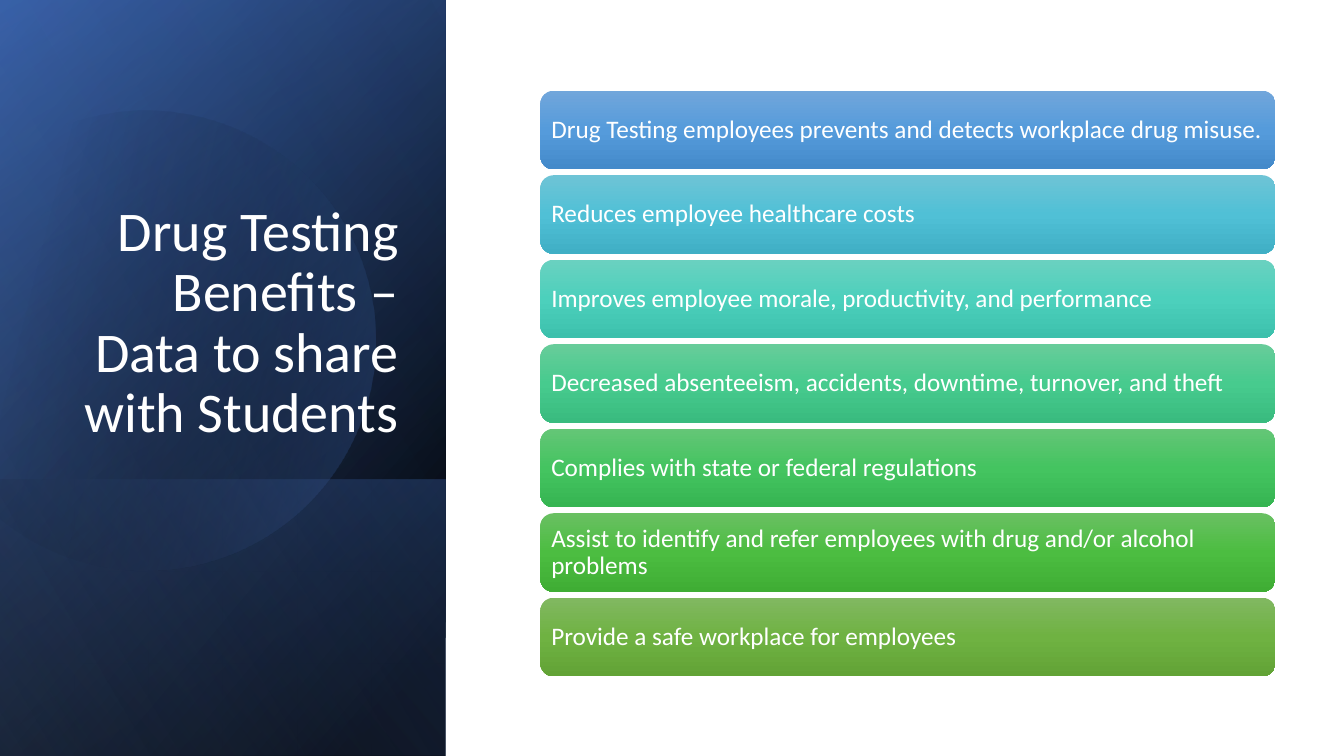
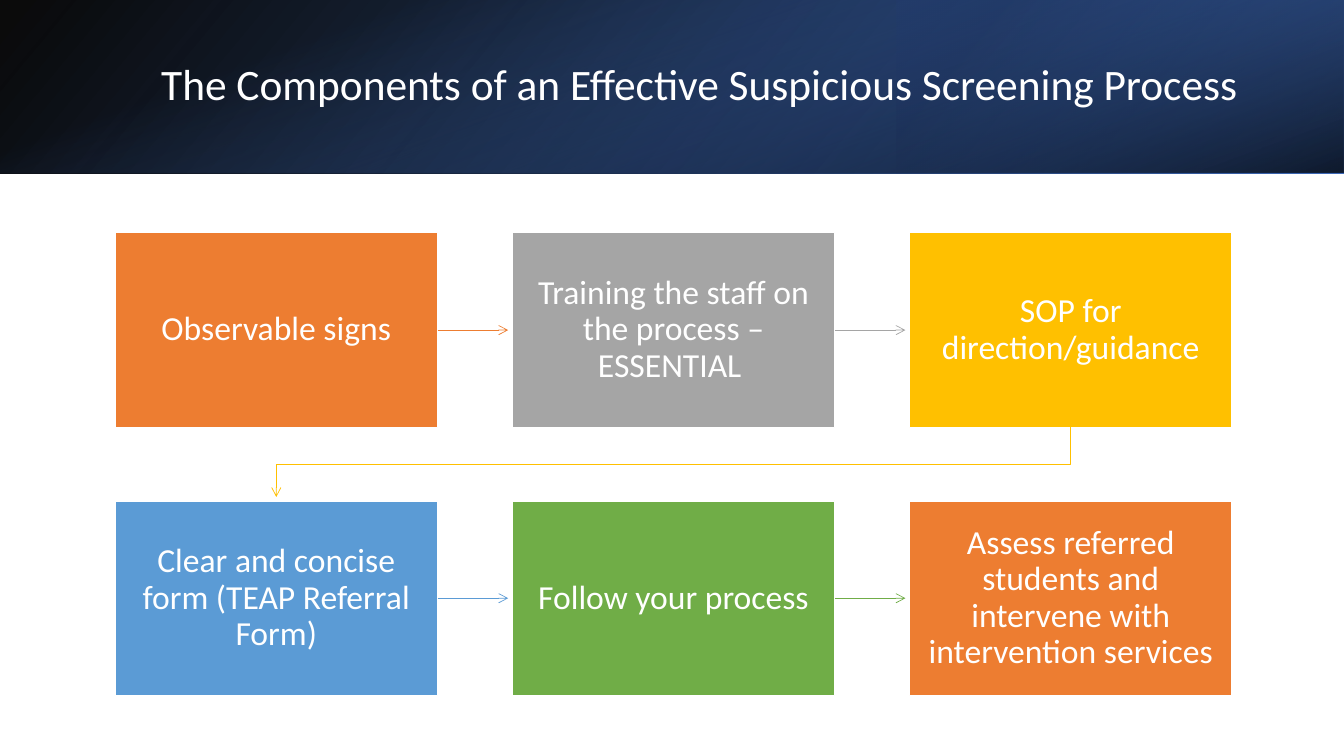
"""Build two slides on drug testing benefits and the screening process."""
from itertools import pairwise
from math import cos, radians, sin, tan

from lxml.etree import SubElement
from pptx import Presentation
from pptx.dml.color import RGBColor
from pptx.enum.shapes import MSO_CONNECTOR, MSO_SHAPE
from pptx.enum.text import MSO_ANCHOR, PP_ALIGN
from pptx.oxml.ns import qn
from pptx.util import Pt

EMU_PER_PX = 9144
SLIDE_WIDTH, SLIDE_HEIGHT = 1333, 750
FONT = "Calibri"

WHITE = RGBColor(0xFF, 0xFF, 0xFF)
BLACK = RGBColor(0x00, 0x00, 0x00)
NAVY = RGBColor(0x20, 0x38, 0x64)
DEEP_BLUE = RGBColor(0x2F, 0x55, 0x97)
BLUE = RGBColor(0x44, 0x72, 0xC4)
PALE_BLUE = RGBColor(0x8F, 0xAA, 0xDC)
ORANGE = RGBColor(0xED, 0x7D, 0x31)
GRAY = RGBColor(0xA5, 0xA5, 0xA5)
GOLD = RGBColor(0xFF, 0xC0, 0x00)
SKY = RGBColor(0x5B, 0x9B, 0xD5)
GREEN = RGBColor(0x70, 0xAD, 0x47)

BENEFITS = [
    ("Drug Testing employees prevents and detects workplace drug misuse.",
     (RGBColor(0x71, 0xA6, 0xDB), RGBColor(0x55, 0x9B, 0xDB), RGBColor(0x44, 0x8A, 0xCA))),
    ("Reduces employee healthcare costs",
     (RGBColor(0x6E, 0xC4, 0xD6), RGBColor(0x50, 0xC0, 0xD6), RGBColor(0x40, 0xAF, 0xC5))),
    ("Improves employee morale, productivity, and performance",
     (RGBColor(0x6A, 0xD1, 0xC0), RGBColor(0x4C, 0xD0, 0xBC), RGBColor(0x3C, 0xC0, 0xAC))),
    ("Decreased absenteeism, accidents, downtime, turnover, and theft",
     (RGBColor(0x67, 0xCC, 0x9A), RGBColor(0x47, 0xCB, 0x8E), RGBColor(0x39, 0xBB, 0x7F))),
    ("Complies with state or federal regulations",
     (RGBColor(0x64, 0xC6, 0x77), RGBColor(0x44, 0xC4, 0x60), RGBColor(0x36, 0xB5, 0x52))),
    ("Assist to identify and refer employees with drug and/or alcohol problems",
     (RGBColor(0x69, 0xC0, 0x62), RGBColor(0x4C, 0xBD, 0x41), RGBColor(0x3F, 0xAD, 0x34))),
    ("Provide a safe workplace for employees",
     (RGBColor(0x81, 0xB8, 0x61), RGBColor(0x6F, 0xB2, 0x42), RGBColor(0x62, 0xA3, 0x36))),
]
STEPS = [
    ("Observable signs", ORANGE),
    ("Training the staff on the process – ESSENTIAL ", GRAY),
    ("SOP for direction/guidance", GOLD),
    ("Clear and concise form (TEAP Referral Form)", SKY),
    ("Follow your process", GREEN),
    ("Assess referred students and intervene with intervention services", ORANGE),
]


def emu(*lengths):
    """Turn px lengths into a list of EMU."""
    return [round(length * EMU_PER_PX) for length in lengths]


def set_gradient(shape, stops, angle):
    """Fill a shape with (position, colour, opacity) stops at a clockwise angle."""
    shape.fill.gradient()
    shape.fill.gradient_angle = (360 - angle) % 360
    stop_list = shape._element.spPr.find(qn("a:gradFill")).find(qn("a:gsLst"))
    for old_stop in list(stop_list):
        stop_list.remove(old_stop)
    for position, color, opacity in stops:
        stop = SubElement(stop_list, qn("a:gs"), pos=str(position * 1000))
        color_node = SubElement(stop, qn("a:srgbClr"), val=str(color))
        if opacity < 100:
            SubElement(color_node, qn("a:alpha"), val=str(opacity * 1000))


def add_box(slide, kind, box):
    """Add a preset shape without shadow or line."""
    shape = slide.shapes.add_shape(kind, *emu(*box))
    shape.shadow.inherit = False
    shape.line.fill.background()
    return shape


def add_layer(slide, box, stops, angle, rotation=0, flip=True):
    """Add one gradient layer of a background panel."""
    layer = add_box(slide, MSO_SHAPE.RECTANGLE, box)
    layer.rotation = rotation
    if flip:
        layer._element.spPr.find(qn("a:xfrm")).set("flipH", "1")
    set_gradient(layer, stops, angle)


def write_text(shape, text, *, size, align=PP_ALIGN.LEFT, anchor=MSO_ANCHOR.MIDDLE,
               inset_x=10, inset_y=5):
    """Write one white wrapped paragraph into a shape."""
    frame = shape.text_frame
    frame.word_wrap = True
    frame.vertical_anchor = anchor
    frame.margin_left, frame.margin_right = emu(inset_x, inset_x)
    frame.margin_top, frame.margin_bottom = emu(inset_y, inset_y)
    paragraph = frame.paragraphs[0]
    paragraph.alignment = align
    paragraph.line_spacing = 0.9
    run = paragraph.add_run()
    run.text = text
    run.font.name = FONT
    run.font.size = Pt(size)
    run.font.color.rgb = WHITE


def add_title(slide, box, text, **text_format):
    """Add a slide title."""
    write_text(slide.shapes.add_textbox(*emu(*box)), text, **text_format)


def style_arrow(shape, color):
    """Give a line its colour, width and open arrowhead."""
    shape.line.color.rgb = color
    shape.line.width = Pt(0.5)
    SubElement(shape.line._get_or_add_ln(), qn("a:tailEnd"), type="arrow")


def add_disc(slide, center_x, center_y, radius):
    """Add the tilted disc of curves, cut off at its left side."""
    def on_circle(degrees, tangent=0):
        """Return the EMU point at an angle, moved along the tangent."""
        cosine, sine = cos(radians(degrees)), sin(radians(degrees))
        return emu(center_x + radius * (cosine - tangent * sine),
                   center_y + radius * (sine + tangent * cosine))

    angles = (-118, -90, 0, 90, 150)
    points = [on_circle(angle) for angle in angles]
    builder = slide.shapes.build_freeform(*points[0], scale=1.0)
    builder.add_line_segments(points[1:], close=True)
    disc = builder.convert_to_shape()
    segments = list(disc._element.spPr.iter(qn("a:lnTo")))
    for segment, (start, end) in zip(segments, pairwise(angles)):
        reach = 4 / 3 * tan(radians(end - start) / 4)
        segment.tag = qn("a:cubicBezTo")
        for order, (x, y) in enumerate((on_circle(start, reach), on_circle(end, -reach))):
            control = SubElement(segment, qn("a:pt"), x=str(x - disc.left), y=str(y - disc.top))
            segment.insert(order, control)
    disc.shadow.inherit = False
    disc.line.fill.background()
    disc.rotation = -16.1
    set_gradient(disc, [(29, BLACK, 0), (100, BLUE, 43)], 30)


def add_side_panel(slide, left, top, width, height):
    """Build the dark panel from quarter-turned gradient layers."""
    turned = (left + (width - height) // 2, top + (height - width) // 2, height, width)
    low_height = 274
    low = (left + (width - low_height) // 2, top + height - (low_height + width) // 2,
           low_height, width)
    add_layer(slide, turned, [(8, BLACK, 100), (100, DEEP_BLUE, 100)], 50, 90)
    add_layer(slide, turned, [(0, BLACK, 0), (99, BLUE, 46)], 30, 90)
    add_layer(slide, low, [(2, BLUE, 29), (100, BLACK, 30)], 130, 90)
    add_disc(slide, left + 144, top + 334, 228)
    add_layer(slide, turned, [(0, BLACK, 0), (99, PALE_BLUE, 11)], 120, 90)


def add_top_band(slide, left, top, width, height):
    """Build the dark band from gradient layers."""
    third = width // 3
    turned = (left + (width - height) // 2, top + (height - width) // 2, height, width)
    add_layer(slide, (left, top, width, height),
              [(0, BLACK, 96), (100, DEEP_BLUE, 100)], 140)
    add_layer(slide, (left + width - third, top, third, height),
              [(19, NAVY, 68), (100, BLUE, 79)], 320, 180)
    add_layer(slide, turned, [(23, BLUE, 0), (99, BLACK, 74)], 340, 90, flip=False)


def add_benefit_list(slide, left, top, width, height):
    """Stack the benefit cards evenly in a box."""
    card_height = 78
    pitch = (height - card_height) / (len(BENEFITS) - 1)
    for index, (text, colors) in enumerate(BENEFITS):
        card = add_box(slide, MSO_SHAPE.ROUNDED_RECTANGLE,
                       (left, top + index * pitch, width, card_height))
        set_gradient(card, [(position, color, 100)
                            for position, color in zip((0, 50, 100), colors)], 90)
        write_text(card, text, size=18, inset_x=7, inset_y=7)


def add_step_arrow(slide, source, target, color):
    """Join two steps, turning down to the next row where needed."""
    gap = emu(4)[0]
    if source.top == target.top:
        middle = source.top + source.height // 2
        arrow = slide.shapes.add_connector(
            MSO_CONNECTOR.STRAIGHT, source.left + source.width, middle,
            target.left - gap, middle)
        arrow.begin_connect(source, 3)
        SubElement(arrow._element.spPr, qn("a:effectLst"))
    else:
        start_x = source.left + source.width // 2
        end_x = target.left + target.width // 2
        start_y = source.top + source.height
        bend = (start_y + target.top) // 2
        builder = slide.shapes.build_freeform(start_x, start_y, scale=1.0)
        builder.add_line_segments(
            [(start_x, bend), (end_x, bend), (end_x, target.top - gap)], close=False)
        arrow = builder.convert_to_shape()
        arrow.shadow.inherit = False
        arrow.fill.background()
    style_arrow(arrow, color)


def add_process(slide, left, top):
    """Lay out the steps in rows of three and link them."""
    steps = []
    for index, (text, color) in enumerate(STEPS):
        row, column = divmod(index, 3)
        box = (left + column * 394, top + row * 266, 320, 193)
        shape = add_box(slide, MSO_SHAPE.RECTANGLE, box)
        shape.fill.solid()
        shape.fill.fore_color.rgb = color
        shape.line.color.rgb = WHITE
        shape.line.width = Pt(1)
        write_text(shape, text, size=24, align=PP_ALIGN.CENTER, inset_x=16, inset_y=16)
        steps.append((shape, color))
    for (source, color), (target, _) in pairwise(steps):
        add_step_arrow(slide, source, target, color)


def build_benefits_slide(slide):
    """Build the slide with a side panel and benefit cards."""
    add_side_panel(slide, 0, 0, 442, SLIDE_HEIGHT)
    add_title(slide, (64, 184, 341, 262),
              "Drug Testing Benefits – Data to share with Students",
              size=40, align=PP_ALIGN.RIGHT, anchor=MSO_ANCHOR.BOTTOM)
    add_benefit_list(slide, 536, 90, 729, 581)


def build_process_slide(slide):
    """Build the slide with a top band and linked steps."""
    add_top_band(slide, 0, 0, SLIDE_WIDTH, 172)
    add_title(slide, (150, 38, 1098, 96),
              "The Components of an Effective Suspicious Screening Process", size=31)
    add_process(slide, 114, 231)


def main():
    """Create and save the presentation."""
    presentation = Presentation()
    presentation.slide_width, presentation.slide_height = emu(SLIDE_WIDTH, SLIDE_HEIGHT)
    for build in (build_benefits_slide, build_process_slide):
        build(presentation.slides.add_slide(presentation.slide_layouts[6]))
    presentation.save("out.pptx")


if __name__ == "__main__":
    main()
